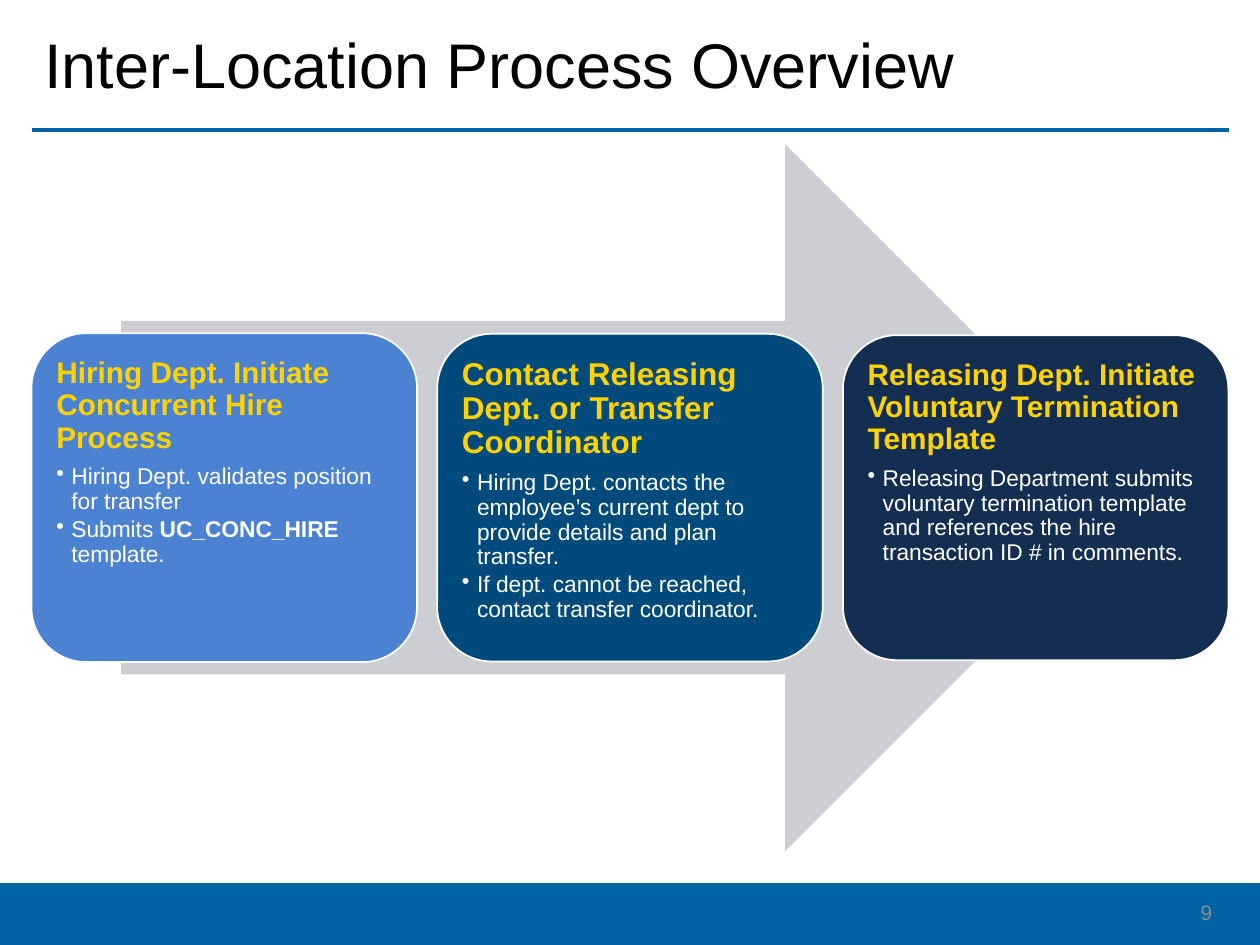
import dataclasses
import typing

import lxml.etree
import pptx
import pptx.dml.color
import pptx.enum.shapes
import pptx.enum.text
import pptx.oxml.ns
import pptx.util

WIDTH, HEIGHT = 10, 7.5
MARGIN = 0.25
CONTENT = WIDTH - 2 * MARGIN
GAP = 0.16
COLUMN = (CONTENT - 2 * GAP) / 3
MIDDLE = 3.95
FONT = "Arial"
BLUE, GOLD, WHITE = "0064A4", "FFD200", "FFFFFF"
SHAPES = pptx.enum.shapes.MSO_SHAPE
INCH = pptx.util.Inches


class Piece(typing.NamedTuple):
    text: str
    bold: bool = False


@dataclasses.dataclass
class Card:
    heading: str
    heading_size: int
    fill: str
    height: float
    bullets: list[list[Piece]]


CARDS = [
    Card("Hiring Dept. Initiate Concurrent Hire Process", 17, "4B83D2", 2.61, [
        [Piece("Hiring Dept. validates position for transfer")],
        [Piece("Submits "), Piece("UC_CONC_HIRE ", True), Piece("template.")],
    ]),
    Card("Contact Releasing Dept. or Transfer Coordinator", 18, "004B7B", 2.6, [
        [Piece("Hiring Dept. contacts the employee’s current dept to provide details and plan transfer.")],
        [Piece("If dept. cannot be reached, contact transfer coordinator.")],
    ]),
    Card("Releasing Dept. Initiate Voluntary Termination Template", 17, "142E52", 2.58, [
        [Piece("Releasing Department submits voluntary termination template "
               "and references the hire transaction ID # in comments.")],
    ]),
]


def color(value: str) -> pptx.dml.color.RGBColor:
    return pptx.dml.color.RGBColor.from_string(value)


def style(span, size: float, ink: str, bold: bool = False) -> None:
    span.font.name = FONT
    span.font.size = pptx.util.Pt(size)
    span.font.bold = bold
    span.font.color.rgb = color(ink)


def add_box(page, kind, left: float, top: float, width: float, height: float, fill: str):
    box = page.shapes.add_shape(kind, INCH(left), INCH(top), INCH(width), INCH(height))
    box.shadow.inherit = False
    box.fill.solid()
    box.fill.fore_color.rgb = color(fill)
    box.line.fill.background()
    return box


def add_rule(page, top: float) -> None:
    rule = page.shapes.add_connector(
        pptx.enum.shapes.MSO_CONNECTOR.STRAIGHT,
        INCH(MARGIN), INCH(top), INCH(WIDTH - MARGIN), INCH(top))
    rule.line.color.rgb = color(BLUE)
    rule.line.width = pptx.util.Pt(2.25)
    lxml.etree.SubElement(rule._element.spPr, pptx.oxml.ns.qn("a:effectLst"))


def set_spacing(para, after: float) -> None:
    para.alignment = pptx.enum.text.PP_ALIGN.LEFT
    para.line_spacing = 0.9
    para.space_after = pptx.util.Pt(after)


def add_bullet(frame, pieces: list[Piece]) -> None:
    para = frame.add_paragraph()
    para.level = 1
    properties = para._p.get_or_add_pPr()
    properties.set("marL", str(INCH(0.12)))
    properties.set("indent", str(INCH(-0.12)))
    bullet = lxml.etree.SubElement(properties, pptx.oxml.ns.qn("a:buChar"))
    bullet.set("char", "•")
    set_spacing(para, 2)
    for piece in pieces:
        span = para.add_run()
        span.text = piece.text
        style(span, 13, WHITE, piece.bold)


def add_card(page, column: int, card: Card) -> None:
    box = add_box(page, SHAPES.ROUNDED_RECTANGLE, MARGIN + column * (COLUMN + GAP),
                  MIDDLE - card.height / 2, COLUMN, card.height, card.fill)
    box.line.color.rgb = color(WHITE)
    box.line.width = pptx.util.Pt(1)
    frame = box.text_frame
    frame.word_wrap = True
    frame.vertical_anchor = pptx.enum.text.MSO_ANCHOR.TOP
    frame.margin_left = frame.margin_right = INCH(0.07)
    frame.margin_top = frame.margin_bottom = INCH(0.07)
    frame.text = card.heading
    heading = frame.paragraphs[0]
    set_spacing(heading, 6)
    style(heading.runs[0], card.heading_size, GOLD, True)
    for pieces in card.bullets:
        add_bullet(frame, pieces)


def set_title(page, text: str) -> None:
    title = page.shapes.title
    title.left, title.top = INCH(MARGIN), INCH(0.05)
    title.width, title.height = INCH(CONTENT), INCH(0.98)
    frame = title.text_frame
    frame.text = text
    frame.auto_size = pptx.enum.text.MSO_AUTO_SIZE.NONE
    frame.vertical_anchor = pptx.enum.text.MSO_ANCHOR.MIDDLE
    set_spacing(frame.paragraphs[0], 0)
    style(frame.paragraphs[0].runs[0], 36, "000000")


def add_page_number(page, text: str) -> None:
    box = page.shapes.add_textbox(INCH(7.47), INCH(7.04), INCH(2.25), INCH(0.4))
    frame = box.text_frame
    frame.word_wrap = True
    frame.text = text
    frame.vertical_anchor = pptx.enum.text.MSO_ANCHOR.MIDDLE
    frame.paragraphs[0].alignment = pptx.enum.text.PP_ALIGN.RIGHT
    style(frame.paragraphs[0].runs[0], 12, "8C8C8C")


def main() -> None:
    deck = pptx.Presentation()
    deck.slide_width, deck.slide_height = INCH(WIDTH), INCH(HEIGHT)
    page = deck.slides.add_slide(deck.slide_layouts[5])
    set_title(page, "Inter-Location Process Overview")
    add_rule(page, 1.03)
    add_box(page, SHAPES.RECTANGLE, 0, 7.01, WIDTH, HEIGHT - 7.01, BLUE)
    arrow_width, arrow_height = 0.85 * CONTENT, 5.61
    add_box(page, SHAPES.RIGHT_ARROW, (WIDTH - arrow_width) / 2,
            MIDDLE - arrow_height / 2, arrow_width, arrow_height, "CDCED4")
    for column, card in enumerate(CARDS):
        add_card(page, column, card)
    add_page_number(page, "9")
    deck.save("out.pptx")


if __name__ == "__main__":
    main()
